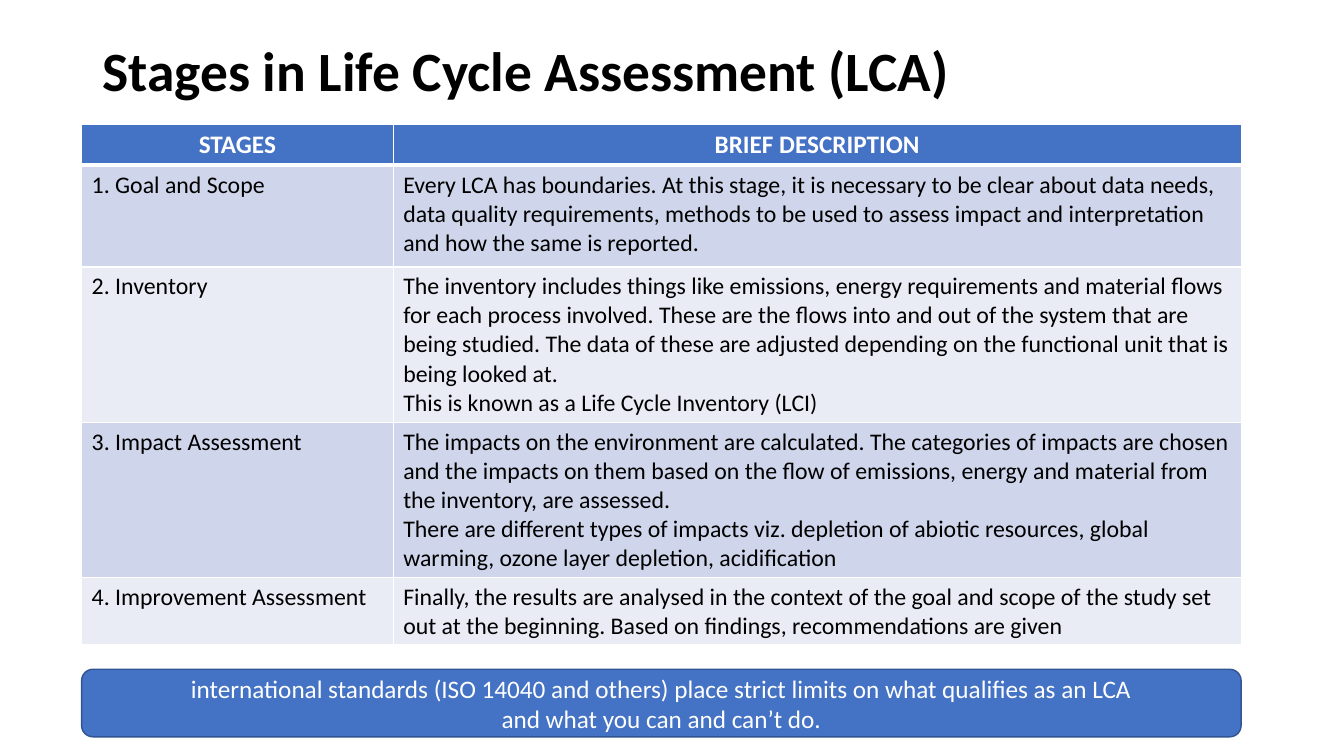
from dataclasses import dataclass

from lxml import etree
from pptx import Presentation
from pptx.dml.color import RGBColor
from pptx.enum.shapes import MSO_SHAPE
from pptx.enum.text import MSO_ANCHOR, PP_ALIGN
from pptx.oxml.ns import qn
from pptx.slide import Slide
from pptx.table import _Cell
from pptx.text.text import TextFrame
from pptx.util import Emu, Pt

ROUNDED = MSO_SHAPE.ROUNDED_RECTANGLE
MIDDLE = MSO_ANCHOR.MIDDLE
LEFT, CENTER = PP_ALIGN.LEFT, PP_ALIGN.CENTER

EMU_PER_PX = 9144  # 100 px to the inch
FONT = "Calibri"
BLACK, WHITE = "000000", "FFFFFF"
BLUE, DARK_BLUE = "4472C4", "325491"
BANDS = ("CFD5EA", "E9EBF5")

CONTENT_LEFT, CONTENT_WIDTH = 81, 1150
TABLE_TOP = 123
COLUMN_WIDTHS = (309, 841)
HEADER_HEIGHT = 41
HEADINGS = ("STAGES", "BRIEF DESCRIPTION")


@dataclass(frozen=True)
class TextStyle:
    size: float
    color: str
    bold: bool = False
    align: PP_ALIGN = LEFT
    line_spacing: float = 1.0


@dataclass(frozen=True)
class Stage:
    name: str
    description: tuple[str, ...]
    height: int


TITLE_STYLE = TextStyle(39.6, BLACK, bold=True, line_spacing=0.9)
HEADER_STYLE = TextStyle(18, WHITE, bold=True, align=CENTER)
BODY_STYLE = TextStyle(17, BLACK)
BANNER_STYLE = TextStyle(18, WHITE, align=CENTER)

STAGES = (
    Stage("1. Goal and Scope", (
        "Every LCA has boundaries. At this stage, it is necessary to be clear about "
        "data needs, data quality requirements, methods to be used to assess impact "
        "and interpretation and how the same is reported.",
    ), 101),
    Stage("2. Inventory", (
        "The inventory includes things like emissions, energy requirements and "
        "material flows for each process involved. These are the flows into and out "
        "of the system that are being studied. The data of these are adjusted "
        "depending on the functional unit that is being looked at.",
        "This is known as a Life Cycle Inventory (LCI)",
    ), 154),
    Stage("3. Impact Assessment", (
        "The impacts on the environment are calculated. The categories of impacts are "
        "chosen and the impacts on them based on the flow of emissions, energy and "
        "material from the inventory, are assessed.",
        "There are different types of impacts viz. depletion of abiotic resources, "
        "global warming, ozone layer depletion, acidification",
    ), 154),
    Stage("4. Improvement Assessment", (
        "Finally, the results are analysed in the context of the goal and scope of "
        "the study set out at the beginning. Based on findings, recommendations are "
        "given",
    ), 67),
)

BANNER_LINES = (
    "international standards (ISO 14040 and others) place strict limits on what "
    "qualifies as an LCA",
    "and what you can and can’t do.",
)


def px(length: int) -> Emu:
    return Emu(length * EMU_PER_PX)


def rgb(color: str) -> RGBColor:
    return RGBColor.from_string(color)


def write(frame: TextFrame, lines: tuple[str, ...], style: TextStyle) -> None:
    frame.word_wrap = True
    for index, line in enumerate(lines):
        paragraph = frame.add_paragraph() if index else frame.paragraphs[0]
        paragraph.alignment = style.align
        paragraph.line_spacing = style.line_spacing
        run = paragraph.add_run()
        run.text = line
        run.font.name = FONT
        run.font.size = Pt(style.size)
        run.font.bold = style.bold
        run.font.color.rgb = rgb(style.color)


def add_borders(cell: _Cell, top: int, bottom: int) -> None:
    """Draw white borders; top and bottom are widths in points."""
    properties = cell._tc.get_or_add_tcPr()
    for side, width in (("L", 1), ("R", 1), ("T", top), ("B", bottom)):
        line = etree.SubElement(properties, qn(f"a:ln{side}"), w=str(Pt(width)))
        fill = etree.SubElement(line, qn("a:solidFill"))
        etree.SubElement(fill, qn("a:srgbClr"), val=WHITE)


def add_title(slide: Slide) -> None:
    box = slide.shapes.add_textbox(px(92), px(40), px(CONTENT_WIDTH), px(66))
    box.text_frame.vertical_anchor = MIDDLE
    write(box.text_frame, ("Stages in Life Cycle Assessment (LCA)",), TITLE_STYLE)


def add_stage_table(slide: Slide) -> None:
    heights = [HEADER_HEIGHT] + [stage.height for stage in STAGES]
    contents = [tuple((heading,) for heading in HEADINGS)]
    contents += [((stage.name,), stage.description) for stage in STAGES]
    table = slide.shapes.add_table(
        len(heights), len(COLUMN_WIDTHS), px(CONTENT_LEFT), px(TABLE_TOP),
        px(CONTENT_WIDTH), px(sum(heights))).table
    for column, width in zip(table.columns, COLUMN_WIDTHS):
        column.width = px(width)
    for index, (row, height, texts) in enumerate(zip(table.rows, heights, contents)):
        row.height = px(height)
        is_header = index == 0
        for cell, lines in zip(row.cells, texts):
            add_borders(cell, top=3 if index == 1 else 1, bottom=3 if is_header else 1)
            cell.fill.solid()
            cell.fill.fore_color.rgb = rgb(BLUE if is_header else BANDS[(index - 1) % 2])
            write(cell.text_frame, lines, HEADER_STYLE if is_header else BODY_STYLE)


def add_banner(slide: Slide) -> None:
    banner = slide.shapes.add_shape(
        ROUNDED, px(CONTENT_LEFT), px(664), px(CONTENT_WIDTH), px(67))
    banner.shadow.inherit = False
    banner.fill.solid()
    banner.fill.fore_color.rgb = rgb(BLUE)
    banner.line.color.rgb = rgb(DARK_BLUE)
    banner.line.width = Pt(1)
    banner.text_frame.vertical_anchor = MIDDLE
    write(banner.text_frame, BANNER_LINES, BANNER_STYLE)


def main() -> None:
    presentation = Presentation()
    presentation.slide_width = px(1333)
    presentation.slide_height = px(750)
    slide = presentation.slides.add_slide(presentation.slide_layouts[6])
    add_title(slide)
    add_stage_table(slide)
    add_banner(slide)
    presentation.save("out.pptx")


if __name__ == "__main__":
    main()
